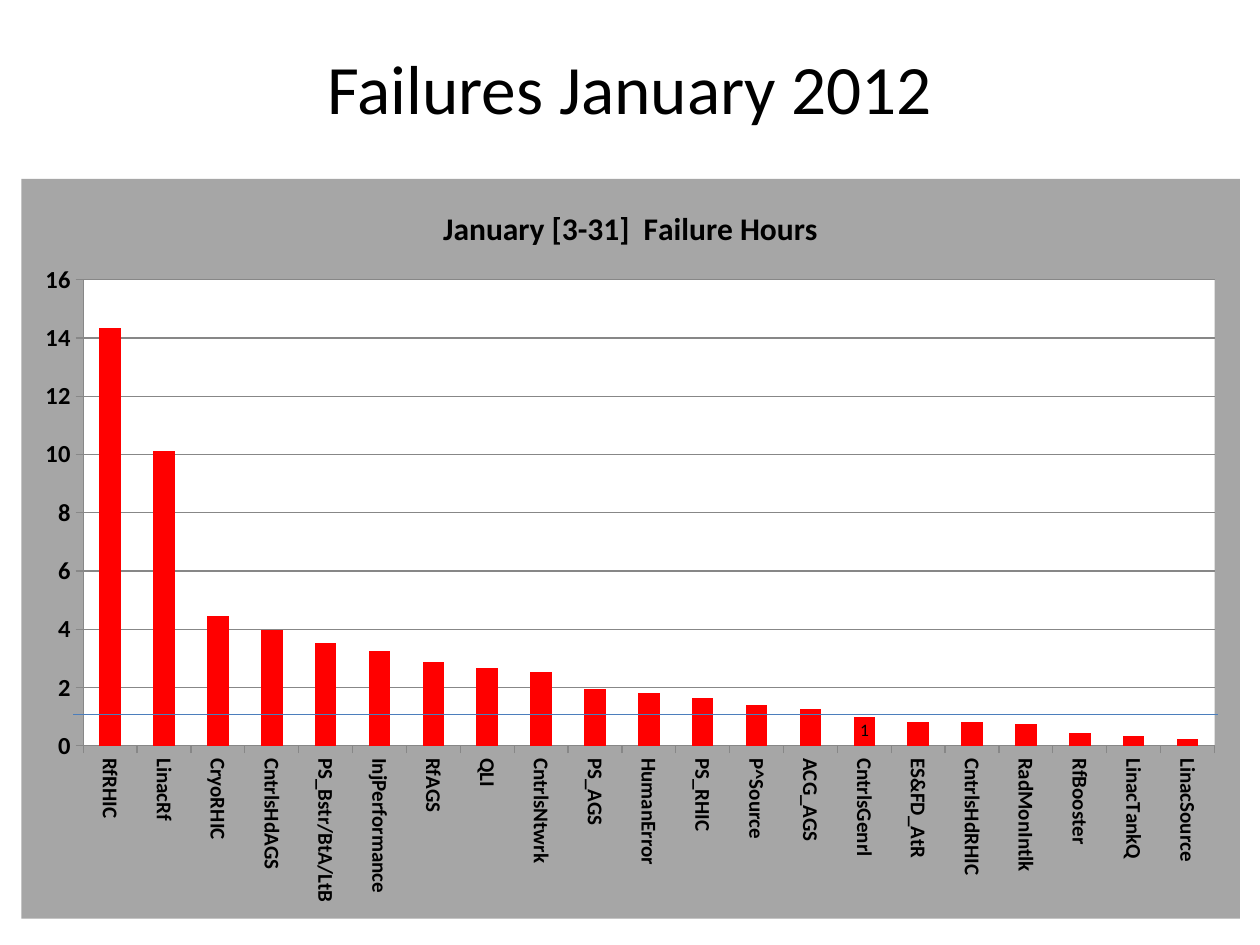
from dataclasses import dataclass

from lxml.etree import SubElement
from pptx import Presentation
from pptx.chart.data import CategoryChartData
from pptx.dml.color import RGBColor
from pptx.enum.chart import XL_CHART_TYPE, XL_LABEL_POSITION, XL_TICK_MARK
from pptx.enum.shapes import MSO_CONNECTOR
from pptx.enum.text import MSO_ANCHOR, PP_ALIGN
from pptx.oxml import parse_xml
from pptx.oxml.ns import nsdecls, qn
from pptx.util import Inches, Pt

TITLE = "Failures January 2012"
CHART_TITLE = "January [3-31]  Failure Hours"
FAILURE_HOURS = [
    ("RfRHIC", 14.33), ("LinacRf", 10.12), ("CryoRHIC", 4.45),
    ("CntrlsHdAGS", 3.98), ("PS_Bstr/BtA/LtB", 3.51), ("InjPerformance", 3.26),
    ("RfAGS", 2.88), ("QLI", 2.67), ("CntrlsNtwrk", 2.52), ("PS_AGS", 1.95),
    ("HumanError", 1.81), ("PS_RHIC", 1.63), ("P^Source", 1.39),
    ("ACG_AGS", 1.27), ("CntrlsGenrl", 1), ("ES&FD_AtR", 0.83),
    ("CntrlsHdRHIC", 0.8), ("RadMonIntlk", 0.76), ("RfBooster", 0.42),
    ("LinacTankQ", 0.32), ("LinacSource", 0.22),
]
LABELLED = "CntrlsGenrl"
TITLE_BOX = (0.5, 0.3, 9, 0.78)
CHART_BOX = (0.17, 1.42, 9.67, 5.87)
PLOT_BOX = (0.66, 2.22, 8.98, 3.7)
THRESHOLD = (0.58, 5.67, 9.67, 5.67)


@dataclass(frozen=True)
class Theme:
    font: str = "Calibri"
    text: str = "000000"
    panel: str = "A6A6A6"
    plot: str = "FFFFFF"
    bar: str = "FF0000"
    grid: str = "878787"
    threshold: str = "4B7EBC"
    title_size: float = 39.6
    chart_title_size: float = 18
    value_size: float = 14
    category_size: float = 12
    base_size: float = 10


THEME = Theme()


def style_font(font, size, bold=False):
    font.name = THEME.font
    font.size = Pt(size)
    font.bold = bold
    font.color.rgb = RGBColor.from_string(THEME.text)


def style_line(line, color, width=0.75):
    line.color.rgb = RGBColor.from_string(color)
    line.width = Pt(width)


def area_fill(color):
    return parse_xml(
        f'<c:spPr {nsdecls("c", "a")}><a:solidFill><a:srgbClr val="{color}"/>'
        "</a:solidFill><a:ln><a:noFill/></a:ln></c:spPr>"
    )


def place_plot(plot_area):
    layout = plot_area.find(qn("c:layout"))
    if layout is not None:
        plot_area.remove(layout)
    left, top, width, height = CHART_BOX
    plot_left, plot_top, plot_width, plot_height = PLOT_BOX
    fractions = {
        "x": (plot_left - left) / width,
        "y": (plot_top - top) / height,
        "w": plot_width / width,
        "h": plot_height / height,
    }
    settings = {"layoutTarget": "inner", "xMode": "edge", "yMode": "edge"}
    settings.update({key: f"{value:.4f}" for key, value in fractions.items()})
    layout = parse_xml(f'<c:layout {nsdecls("c")}><c:manualLayout/></c:layout>')
    for tag, value in settings.items():
        SubElement(layout[0], qn(f"c:{tag}")).set("val", value)
    plot_area.insert(0, layout)


def add_title(slide):
    shape = slide.shapes.add_textbox(*map(Inches, TITLE_BOX))
    frame = shape.text_frame
    frame.word_wrap = True
    frame.vertical_anchor = MSO_ANCHOR.MIDDLE
    paragraph = frame.paragraphs[0]
    paragraph.alignment = PP_ALIGN.CENTER
    run = paragraph.add_run()
    run.text = TITLE
    style_font(run.font, THEME.title_size)


def add_failure_chart(slide):
    names, hours = zip(*FAILURE_HOURS)
    data = CategoryChartData()
    data.categories = names
    data.add_series("Series 1", hours)
    chart = slide.shapes.add_chart(
        XL_CHART_TYPE.COLUMN_CLUSTERED, *map(Inches, CHART_BOX), data
    ).chart
    style_font(chart.font, THEME.base_size)
    chart.has_legend = False
    chart.has_title = True
    run = chart.chart_title.text_frame.paragraphs[0].add_run()
    run.text = CHART_TITLE
    style_font(run.font, THEME.chart_title_size, True)

    plot = chart.plots[0]
    plot.gap_width = 150
    plot.vary_by_categories = False
    series = plot.series[0]
    series.format.fill.solid()
    series.format.fill.fore_color.rgb = RGBColor.from_string(THEME.bar)
    label = series.points[names.index(LABELLED)].data_label
    style_font(label.font, THEME.base_size)
    label.position = XL_LABEL_POSITION.INSIDE_BASE

    axes = (
        (chart.category_axis, THEME.category_size),
        (chart.value_axis, THEME.value_size),
    )
    for axis, size in axes:
        style_font(axis.tick_labels.font, size, True)
        style_line(axis.format.line, THEME.grid)
        axis.major_tick_mark = XL_TICK_MARK.OUTSIDE
        axis.minor_tick_mark = XL_TICK_MARK.NONE
    value_axis = chart.value_axis
    value_axis.minimum_scale = 0
    value_axis.maximum_scale = 16
    value_axis.major_unit = 2
    value_axis.has_major_gridlines = True
    style_line(value_axis.major_gridlines.format.line, THEME.grid)

    chart_space = chart.element
    category_text = chart_space.find(".//" + qn("c:catAx") + "/" + qn("c:txPr"))
    category_text.find(qn("a:bodyPr")).set("rot", "5400000")
    chart_part = chart_space.find(qn("c:chart"))
    plot_area = chart_part.find(qn("c:plotArea"))
    place_plot(plot_area)
    plot_area.append(area_fill(THEME.plot))
    chart_part.addnext(area_fill(THEME.panel))


def add_threshold(slide):
    connector = slide.shapes.add_connector(
        MSO_CONNECTOR.STRAIGHT, *map(Inches, THRESHOLD)
    )
    style_line(connector.line, THEME.threshold)
    SubElement(connector.element.spPr, qn("a:effectLst"))


def main():
    presentation = Presentation()
    presentation.slide_width = Inches(10)
    presentation.slide_height = Inches(7.5)
    slide = presentation.slides.add_slide(presentation.slide_layouts[6])
    add_title(slide)
    add_failure_chart(slide)
    add_threshold(slide)
    presentation.save("out.pptx")


if __name__ == "__main__":
    main()
